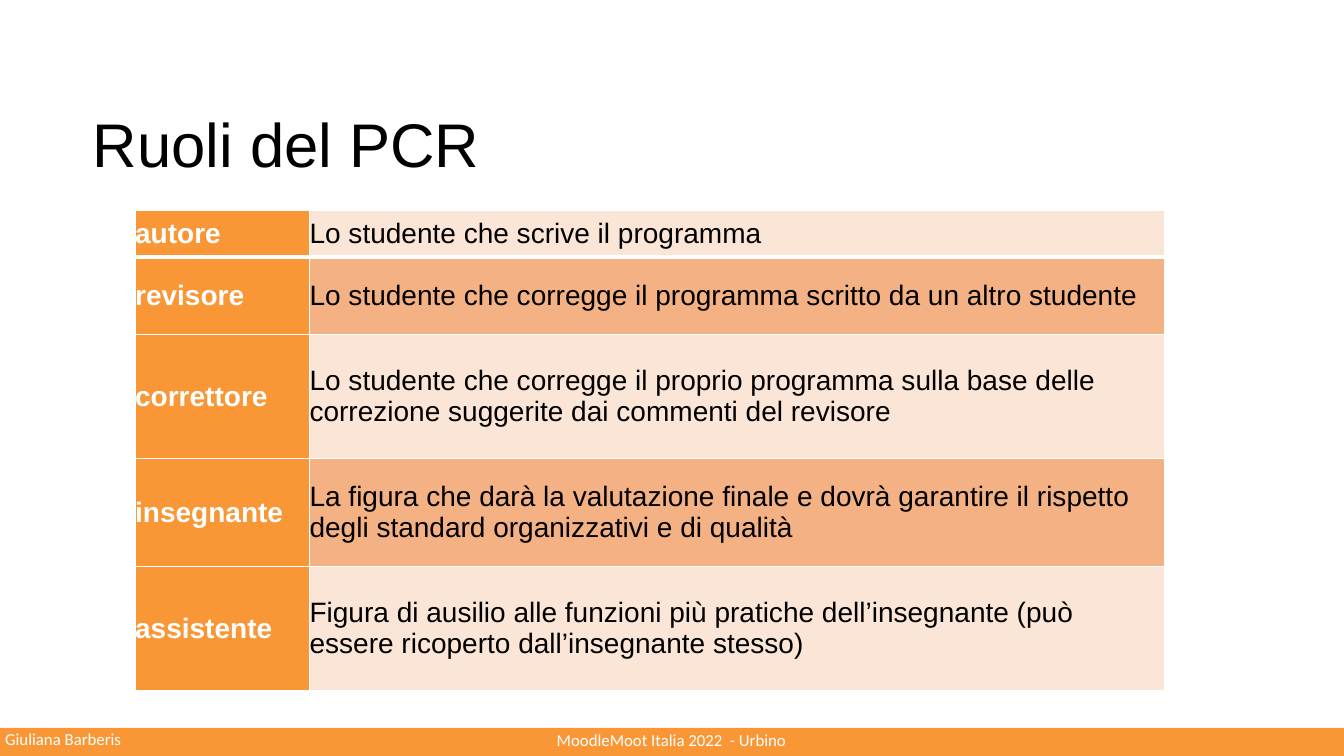
from dataclasses import dataclass

from lxml import etree
from pptx import Presentation
from pptx.dml.color import RGBColor
from pptx.enum.shapes import MSO_SHAPE
from pptx.enum.text import MSO_ANCHOR, PP_ALIGN
from pptx.oxml.ns import qn
from pptx.util import Inches, Pt

RECTANGLE = MSO_SHAPE.RECTANGLE
MIDDLE = MSO_ANCHOR.MIDDLE
LEFT, CENTER = PP_ALIGN.LEFT, PP_ALIGN.CENTER


@dataclass(frozen=True)
class Theme:
    accent: str = "F99737"
    light_band: str = "FBE5D6"
    dark_band: str = "F4B183"
    white: str = "FFFFFF"
    black: str = "000000"
    body_font: str = "Arial"
    footer_font: str = "Calibri"
    title_size: int = 44
    table_size: int = 20
    footer_size: int = 12
    grid_width: int = 1
    first_rule_width: int = 3


class SlideBuilder:
    def __init__(self, slide, theme):
        self.slide = slide
        self.theme = theme

    def add_words(self, frame, text, font, size, color, bold=False, align=LEFT, spacing=None):
        paragraph = frame.paragraphs[0]
        paragraph.alignment = align
        if spacing:
            paragraph.line_spacing = spacing
        run = paragraph.add_run()
        run.text = text
        run.font.name = font
        run.font.size = Pt(size)
        run.font.bold = bold
        run.font.color.rgb = RGBColor.from_string(color)

    def bar(self, left, top, width, height):
        bar = self.slide.shapes.add_shape(
            RECTANGLE, Inches(left), Inches(top), Inches(width), Inches(height))
        bar.shadow.inherit = False
        bar.fill.solid()
        bar.fill.fore_color.rgb = RGBColor.from_string(self.theme.accent)
        bar.line.fill.background()

    def text(self, left, top, width, height, text, font, size, color, inset=0, **style):
        box = self.slide.shapes.add_textbox(
            Inches(left), Inches(top), Inches(width), Inches(height))
        frame = box.text_frame
        frame.word_wrap = True
        frame.vertical_anchor = MIDDLE
        frame.margin_left = frame.margin_right = Inches(inset)
        frame.margin_top = frame.margin_bottom = Inches(inset)
        self.add_words(frame, text, font, size, color, **style)

    def footer(self, left, top, width, height, text, **style):
        theme = self.theme
        self.text(left, top, width, height, text, theme.footer_font,
                  theme.footer_size, theme.white, inset=0.05, **style)

    def borders(self, cell, top, bottom):
        grid = self.theme.grid_width
        properties = cell._tc.get_or_add_tcPr()
        widths = {"a:lnL": grid, "a:lnR": grid, "a:lnT": top, "a:lnB": bottom}
        for position, (tag, width) in enumerate(widths.items()):
            line = etree.Element(qn(tag), w=str(Pt(width)))
            fill = etree.SubElement(line, qn("a:solidFill"))
            etree.SubElement(fill, qn("a:srgbClr"), val=self.theme.white)
            properties.insert(position, line)

    def cell(self, cell, text, fill, color, bold):
        cell.vertical_anchor = MIDDLE
        cell.margin_left = cell.margin_right = 0
        cell.margin_top = cell.margin_bottom = 0
        cell.fill.solid()
        cell.fill.fore_color.rgb = RGBColor.from_string(fill)
        self.add_words(cell.text_frame, text, self.theme.body_font,
                       self.theme.table_size, color, bold=bold)

    def table(self, left, top, widths, heights, rows):
        theme = self.theme
        table = self.slide.shapes.add_table(
            len(rows), len(widths), Inches(left), Inches(top),
            Inches(sum(widths)), Inches(sum(heights))).table
        table.first_row = table.horz_banding = False
        for column, width in zip(table.columns, widths):
            column.width = Inches(width)
        for index, (role, description) in enumerate(rows):
            table.rows[index].height = Inches(heights[index])
            band = theme.dark_band if index % 2 else theme.light_band
            role_cell, description_cell = table.rows[index].cells
            self.cell(role_cell, role, theme.accent, theme.white, True)
            self.cell(description_cell, description, band, theme.black, False)
            # The rule under the first row is heavier than the grid
            top_width = theme.first_rule_width if index == 1 else theme.grid_width
            bottom_width = theme.first_rule_width if index == 0 else theme.grid_width
            for cell in (role_cell, description_cell):
                self.borders(cell, top_width, bottom_width)


ROLES = [
    ("autore", "Lo studente che scrive il programma"),
    ("revisore", "Lo studente che corregge il programma scritto da un altro studente"),
    ("correttore", "Lo studente che corregge il proprio programma sulla base delle "
                   "correzione suggerite dai commenti del revisore"),
    ("insegnante", "La figura che darà la valutazione finale e dovrà garantire il rispetto "
                   "degli standard organizzativi e di qualità"),
    ("assistente", "Figura di ausilio alle funzioni più pratiche dell’insegnante (può "
                   "essere ricoperto dall’insegnante stesso)"),
]


def main():
    presentation = Presentation()
    presentation.slide_width = Inches(13.33)
    presentation.slide_height = Inches(7.5)
    theme = Theme()
    builder = SlideBuilder(
        presentation.slides.add_slide(presentation.slide_layouts[6]), theme)

    # Footer band
    builder.bar(0, 7.22, 13.33, 0.28)
    builder.footer(4.75, 7.19, 3.82, 0.3, "MoodleMoot Italia 2022  - Urbino", align=CENTER)
    builder.footer(0, 7.18, 4.29, 0.33, "Giuliana Barberis", spacing=0.9)

    # Title
    builder.text(0.92, 0.74, 11.5, 1.45, "Ruoli del PCR", theme.body_font,
                 theme.title_size, theme.black, spacing=0.9)

    # Roles and their descriptions
    builder.table(1.34, 2.09, [1.73, 8.48], [0.46, 0.77, 1.23, 1.07, 1.23], ROLES)

    presentation.save("out.pptx")


if __name__ == "__main__":
    main()
